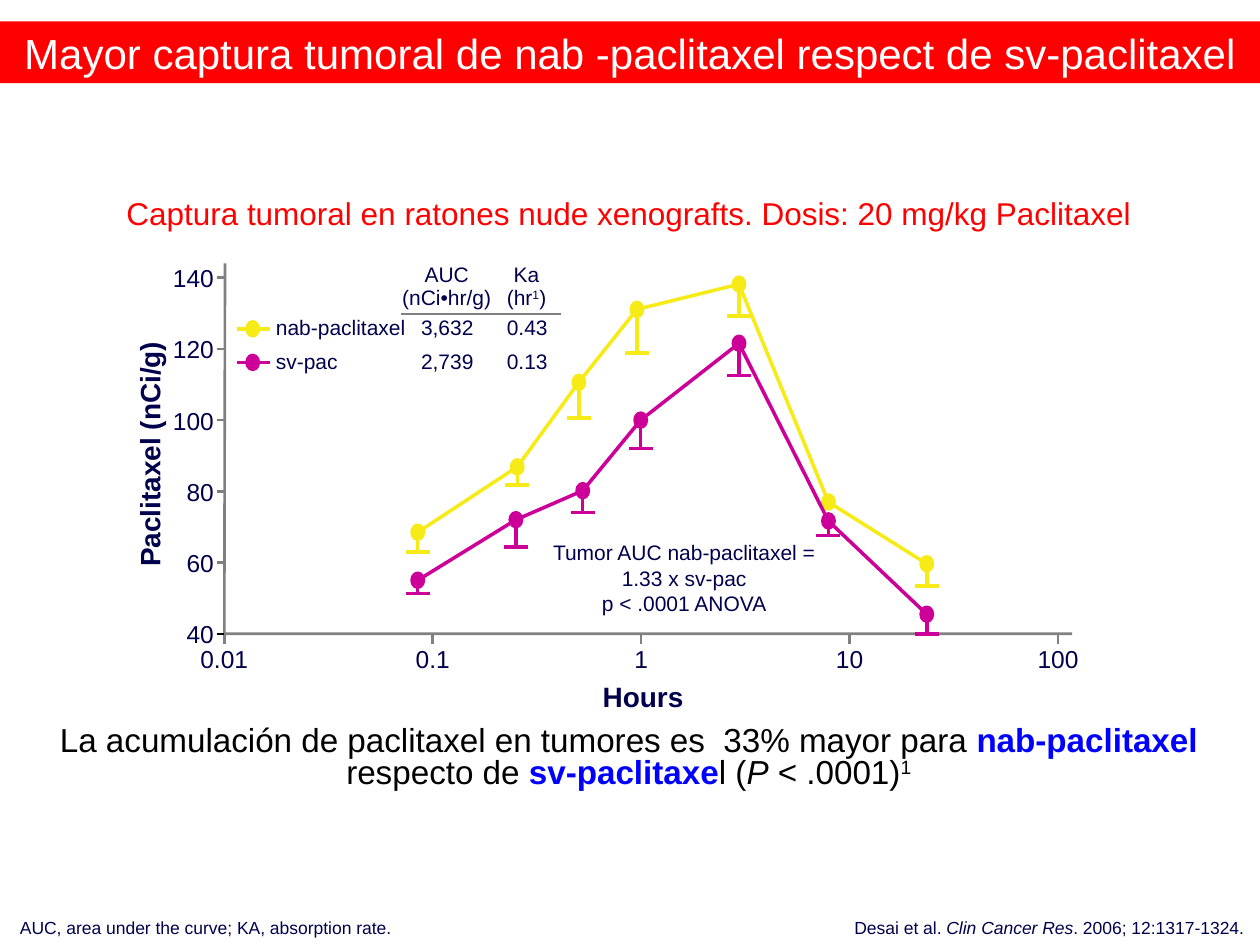
from lxml import etree
from pptx import Presentation
from pptx.dml.color import RGBColor
from pptx.enum.shapes import MSO_CONNECTOR, MSO_SHAPE
from pptx.enum.text import MSO_ANCHOR, PP_ALIGN
from pptx.oxml.ns import qn
from pptx.util import Pt

LEFT, MID, RIGHT = PP_ALIGN.LEFT, PP_ALIGN.CENTER, PP_ALIGN.RIGHT
TOP, CENTER = MSO_ANCHOR.TOP, MSO_ANCHOR.MIDDLE
OVAL, LINE = MSO_SHAPE.OVAL, MSO_CONNECTOR.STRAIGHT
NAVY, GREY, RED, BLUE = "00004D", "808080", "FF0000", "0000FF"
YELLOW, PINK, WHITE, BLACK = "F6EB16", "CC0099", "FFFFFF", "000000"
color = RGBColor.from_string

deck = Presentation()
deck.slide_width, deck.slide_height = Pt(720), Pt(540)
slide = deck.slides.add_slide(deck.slide_layouts[6])
shapes = slide.shapes


def write(x, y, w, h, runs, size, hue=NAVY, align=MID, label=True, space=None, bold=None):
    box = shapes.add_textbox(Pt(x), Pt(y), Pt(w), Pt(h))
    frame = box.text_frame
    frame.word_wrap = not label
    frame.vertical_anchor = CENTER if label else TOP
    if label:
        frame.margin_left = frame.margin_right = 0
        frame.margin_top = frame.margin_bottom = 0
    para = frame.paragraphs[0]
    para.alignment, para.line_spacing = align, space
    font = para.font
    font.name, font.size, font.bold = "Arial", Pt(size), bold
    font.color.rgb = color(hue)
    for text, style in runs:
        for row, part in enumerate(text.split("\n")):
            if row:
                para.add_line_break()
            run = para.add_run()
            run.text = part
            if style == "super":
                run.font._element.set("baseline", "30000")
            elif style == "italic":
                run.font.italic = True
            elif style == "strong":
                run.font.bold = True
                run.font.color.rgb = color(BLUE)
    return box


def draw(points, hue, width):
    spots = [(Pt(x), Pt(y)) for x, y in points]
    if len(spots) == 2:
        shape = shapes.add_connector(LINE, *spots[0], *spots[1])
    else:
        path = shapes.build_freeform(*spots[0], scale=1.0)
        path.add_line_segments(spots[1:], close=False)
        shape = path.convert_to_shape()
        shape.fill.background()
    shape.line.color.rgb = color(hue)
    shape.line.width = Pt(width)
    etree.SubElement(shape._element.spPr, qn("a:effectLst"))


write(0, 411.8, 718.6, 45.4, [
    ("La acumulación de paclitaxel en tumores es  33% mayor para ", ""),
    ("nab-paclitaxel ", "strong"), ("respecto de ", ""),
    ("sv-paclitaxe", "strong"), ("l (", ""), ("P", "italic"),
    (" < .0001)", ""), ("1", "super")], 19, BLACK, label=False, space=0.8)

title = "Mayor captura tumoral de nab -paclitaxel respect de sv-paclitaxel"
band = write(0, 12.2, 720, 35.3, [(title, "")], 24, WHITE, label=False)
band.fill.solid()
band.fill.fore_color.rgb = color(RED)

write(448.6, 520.6, 269.3, 19.4, [
    ("Desai et al. ", ""), ("Clin Cancer Res", "italic"),
    (". 2006; 12:1317-1324.", "")], 10, align=RIGHT, label=False)
write(4.3, 520.6, 339.1, 19.4, [
    ("AUC, area under the curve; KA, absorption rate.", "")],
    10, align=LEFT, label=False)
write(0, 107.3, 718.6, 28.8, [
    ("Captura tumoral en ratones nude xenografts. Dosis: 20 mg/kg Paclitaxel", "")],
    18, RED, label=False)

left, base = 128.2, 362.2
draw([(612.7, base), (left, base), (128.6, 150.5)], GREY, 1.5)
for step in range(6):
    y = base - 40.7 * step
    draw([(123.8, y), (left, y)], GREY if step else BLACK, 1.5)
    write(92, y - 8.6, 30.2, 17.3, [(str(40 + 20 * step), "")], 14, align=RIGHT)
for step, mark in enumerate(["0.01", "0.1", "1", "10", "100"]):
    x = left + 119.1 * step
    draw([(x, 362.9), (x, 367.9)], GREY, 1.5)
    write(x - 15, 367.9, 30, 17.3, [(mark, "")], 14)
write(343.4, 387.4, 48.2, 20.9, [("Hours", "")], 16, bold=True)
side = write(19.4, 249.1, 131.8, 20.9, [("Paclitaxel (nCi/g)", "")], 16, bold=True)
side.rotation = 270

series = [
    (YELLOW, "nab-paclitaxel", "3,632", "0.43", 187.9, [
        (238.7, 304.2, 315.4), (295.6, 266.8, 277.2), (330.8, 218.5, 239),
        (364, 176.8, 201.6), (422.3, 162.4, 180.7), (473.4, 286.9, None),
        (529.6, 322.2, 334.8)]),
    (PINK, "sv-pac", "2,739", "0.13", 207.1, [
        (238.7, 331.6, 339.1), (294.8, 297, 312.5), (333, 280.4, 293),
        (366.1, 240.1, 256.3), (422.3, 196.2, 214.6), (473.4, 297.7, 306),
        (529.6, 351, 362.2)])]
for hue, name, auc, rate, key, data in series:
    draw([(135.4, key), (154.1, key)], hue, 2)
    draw([(x, y) for x, y, end in data], hue, 2)
    for x, y, end in data:
        if end:
            draw([(x, y), (x, end)], hue, 2)
            draw([(x - 6.85, end), (x + 6.85, end)], hue, 2)
    for x, y in [(144.4, key)] + [(x, y) for x, y, end in data]:
        dot = shapes.add_shape(OVAL, Pt(x - 3.25), Pt(y - 4), Pt(6.5), Pt(8))
        dot.shadow.inherit = False
        dot.fill.solid()
        dot.fill.fore_color.rgb = dot.line.color.rgb = color(hue)
        dot.line.width = Pt(2)
    for x, w, text, align in [(157.7, 74.2, name, LEFT),
                              (240.5, 30.2, auc, MID), (289.4, 23.8, rate, MID)]:
        write(x, key - 6.5, w, 13, [(text, "")], 12, align=align, space=0.9)

write(229.7, 151.2, 51.1, 25.9, [("AUC\n(nCi•hr/g)", "")], 12, space=0.9)
write(289.4, 151.2, 23, 25.9, [
    ("Ka\n(hr", ""), ("1", "super"), (")", "")], 12, space=0.9)
draw([(229, 179.3), (320.4, 179.3)], GREY, 1)
write(315.4, 308.2, 151.2, 43.9, [
    ("Tumor AUC nab-paclitaxel =\n1.33 x sv-pac\np < .0001 ANOVA", "")], 12)

deck.save("out.pptx")
